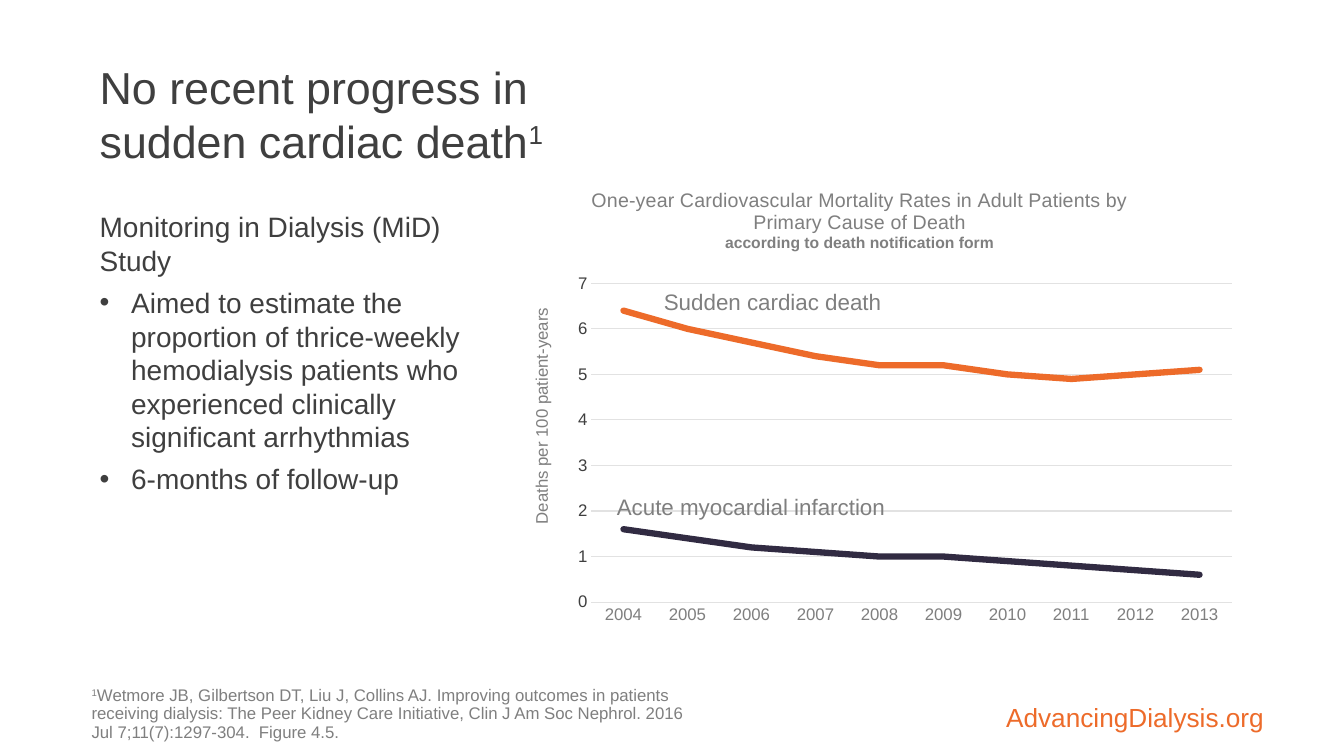
from dataclasses import dataclass

from lxml import etree
from pptx import Presentation
from pptx.chart.data import CategoryChartData
from pptx.dml.color import RGBColor
from pptx.enum.chart import XL_CHART_TYPE, XL_TICK_MARK
from pptx.enum.text import MSO_ANCHOR, PP_ALIGN
from pptx.oxml.ns import qn
from pptx.util import Pt

LINE_CHART = XL_CHART_TYPE.LINE
NO_TICKS = XL_TICK_MARK.NONE
TOP, MIDDLE, BOTTOM = MSO_ANCHOR.TOP, MSO_ANCHOR.MIDDLE, MSO_ANCHOR.BOTTOM
LEFT, CENTER, RIGHT = PP_ALIGN.LEFT, PP_ALIGN.CENTER, PP_ALIGN.RIGHT


@dataclass(frozen=True)
class Theme:
    """Colours, font and type sizes of the slide."""
    font: str = "Arial"
    dark: RGBColor = RGBColor(0x3F, 0x3F, 0x3F)
    gray: RGBColor = RGBColor(0x7F, 0x7F, 0x7F)
    grid: RGBColor = RGBColor(0xE2, 0xE2, 0xE2)
    orange: RGBColor = RGBColor(0xED, 0x6B, 0x2A)
    navy: RGBColor = RGBColor(0x31, 0x2B, 0x42)
    title: float = 32
    body: float = 20
    site: float = 18.7
    label: float = 16
    chart_title: float = 14
    chart_subtitle: float = 11.2
    small: float = 12


THEME = Theme()
YEARS = [str(year) for year in range(2004, 2014)]
SUDDEN_DEATH = (6.4, 6, 5.7, 5.4, 5.2, 5.2, 5, 4.9, 5, 5.1)
INFARCTION = (1.6, 1.4, 1.2, 1.1, 1, 1, 0.9, 0.8, 0.7, 0.6)


def style_font(font, size, color, bold=False):
    """Apply the theme font with a size and colour."""
    font.name = THEME.font
    font.size = Pt(size)
    font.color.rgb = color
    font.bold = bold


def add_text_frame(slide, box, anchor=TOP, insets=(7.2, 3.6)):
    """Add a wrapping text box and return its text frame."""
    shape = slide.shapes.add_textbox(*map(Pt, box))
    frame = shape.text_frame
    frame.word_wrap = True
    frame.vertical_anchor = anchor
    frame.margin_left = frame.margin_right = Pt(insets[0])
    frame.margin_top = frame.margin_bottom = Pt(insets[1])
    return frame


def write_line(paragraph, parts, size, color, align=LEFT):
    """Fill a paragraph with (text, is_superscript) parts."""
    for text, superscript in parts:
        run = paragraph.add_run()
        run.text = text
        if superscript:
            run._r.get_or_add_rPr().set("baseline", "30000")
    paragraph.alignment = align
    style_font(paragraph.font, size, color)


def add_heading(slide, box):
    """Add the slide title."""
    frame = add_text_frame(slide, box, MIDDLE, (5, 3))
    parts = [("No recent progress in sudden cardiac death", False), ("1", True)]
    write_line(frame.paragraphs[0], parts, THEME.title, THEME.dark)


def add_study_summary(slide, box):
    """Add the study name and its bulleted points."""
    frame = add_text_frame(slide, box, insets=(5, 3))
    lines = (
        ("Monitoring in Dialysis (MiD) Study", False),
        ("Aimed to estimate the proportion of thrice-weekly hemodialysis patients "
         "who experienced clinically significant arrhythmias", True),
        ("6-months of follow-up", True),
    )
    for index, (text, bulleted) in enumerate(lines):
        paragraph = frame.add_paragraph() if index else frame.paragraphs[0]
        paragraph.space_after = Pt(6)
        if bulleted:
            properties = paragraph._p.get_or_add_pPr()
            properties.set("marL", str(Pt(22.5)))
            properties.set("indent", str(-Pt(22.5)))
            etree.SubElement(properties, qn("a:buFont")).set("typeface", THEME.font)
            etree.SubElement(properties, qn("a:buChar")).set("char", "•")
        write_line(paragraph, [(text, False)], THEME.body, THEME.dark)


def place_chart_part(part, **values):
    """Give a chart title or plot area a manual layout."""
    for layout in part.findall(qn("c:layout")):
        part.remove(layout)
    layout = etree.Element(qn("c:layout"))
    manual = etree.SubElement(layout, qn("c:manualLayout"))
    for name, value in values.items():
        etree.SubElement(manual, qn(f"c:{name}")).set("val", str(value))
    part.insert(0 if part.find(qn("c:tx")) is None else 1, layout)


def style_axis(axis, color):
    """Set what both axes share."""
    axis.major_tick_mark = axis.minor_tick_mark = NO_TICKS
    style_font(axis.tick_labels.font, THEME.small, color)


def style_value_axis(axis):
    """Set the scale, gridlines and title of the value axis."""
    style_axis(axis, THEME.dark)
    axis.minimum_scale, axis.maximum_scale, axis.major_unit = 0, 7, 1
    axis.tick_labels.number_format = "0"
    axis.tick_labels.number_format_is_linked = False
    axis.format.line.fill.background()
    axis.major_gridlines.format.line.color.rgb = THEME.grid
    axis.major_gridlines.format.line.width = Pt(0.75)
    frame = axis.axis_title.text_frame
    frame.text = "Deaths per 100 patient-years"
    style_font(frame.paragraphs[0].font, THEME.small, THEME.gray)
    title = axis.axis_title.element
    body = next(title.iter(qn("a:bodyPr")))
    body.set("rot", "-5400000")
    body.set("vert", "horz")
    place_chart_part(title, xMode="edge", yMode="edge", x=0.04, y=0.25)


def style_chart_title(title):
    """Write the two-level chart title."""
    frame = title.text_frame
    frame.text = ("One-year Cardiovascular Mortality Rates in Adult Patients by "
                  "Primary Cause of Death\naccording to death notification form")
    heading, subtitle = frame.paragraphs
    style_font(heading.font, THEME.chart_title, THEME.gray)
    style_font(subtitle.font, THEME.chart_subtitle, THEME.gray, bold=True)
    place_chart_part(title.element, xMode="edge", yMode="edge", x=0.12, y=0.02)


def add_mortality_chart(slide, box):
    """Add the line chart with a label beside each line."""
    data = CategoryChartData()
    data.categories = YEARS
    data.add_series("Sudden cardiac death", SUDDEN_DEATH)
    data.add_series("Acute myocardial infarction", INFARCTION)
    chart = slide.shapes.add_chart(LINE_CHART, *map(Pt, box), data).chart
    chart.has_legend = False
    style_font(chart.font, THEME.small, THEME.dark)
    style_chart_title(chart.chart_title)
    style_value_axis(chart.value_axis)
    style_axis(chart.category_axis, THEME.gray)
    chart.category_axis.format.line.color.rgb = THEME.grid
    chart.category_axis.format.line.width = Pt(0.75)
    plot_area = next(chart.element.iter(qn("c:plotArea")))
    place_chart_part(plot_area, layoutTarget="inner", xMode="edge", yMode="edge",
                     x=0.124, y=0.209, w=0.849, h=0.612)
    chart.plots[0].vary_by_categories = False
    for series, color in zip(chart.plots[0].series, (THEME.orange, THEME.navy)):
        series.smooth = False
        series.format.line.color.rgb = color
        series.format.line.width = Pt(4.5)
        next(series.format.line._get_or_add_ln().iter(qn("a:ln"))).set("cap", "rnd")

    left, top = box[:2]
    labels = (("Sudden cardiac death", 88.5, 77.8, CENTER),
              ("Acute myocardial infarction", 77.8, 224, LEFT))
    for text, across, down, align in labels:
        frame = add_text_frame(slide, (left + across, top + down, 215.3, 26.6))
        write_line(frame.paragraphs[0], [(text, False)], THEME.label, THEME.gray, align)


def add_reference(slide, box):
    """Add the numbered source reference."""
    paragraph = add_text_frame(slide, box).paragraphs[0]
    paragraph.line_spacing = 0.9
    reference = ("Wetmore JB, Gilbertson DT, Liu J, Collins AJ. Improving outcomes in "
                 "patients receiving dialysis: The Peer Kidney Care Initiative, Clin J Am "
                 "Soc Nephrol. 2016 Jul 7;11(7):1297-304.  Figure 4.5.")
    write_line(paragraph, [("1", True), (reference, False)], THEME.small, THEME.gray)


def add_site_name(slide, box):
    """Add the web address in the corner."""
    paragraph = add_text_frame(slide, box, BOTTOM, (8, 0)).paragraphs[0]
    paragraph.line_spacing = 0.9
    write_line(paragraph, [("AdvancingDialysis.org", False)], THEME.site, THEME.orange, RIGHT)


def main():
    """Build and save the slide."""
    presentation = Presentation()
    presentation.slide_width, presentation.slide_height = Pt(960), Pt(540)
    slide = presentation.slides.add_slide(presentation.slide_layouts[6])
    add_site_name(slide, (584.6, 479.5, 326.2, 43.9))
    add_mortality_chart(slide, (355.7, 124.6, 538.6, 372.2))
    add_study_summary(slide, (66.2, 146.9, 302.4, 314.6))
    add_reference(slide, (58.3, 487.4, 452.2, 42.5))
    add_heading(slide, (66.2, 28.8, 415.4, 104.4))
    presentation.save("out.pptx")


if __name__ == "__main__":
    main()
